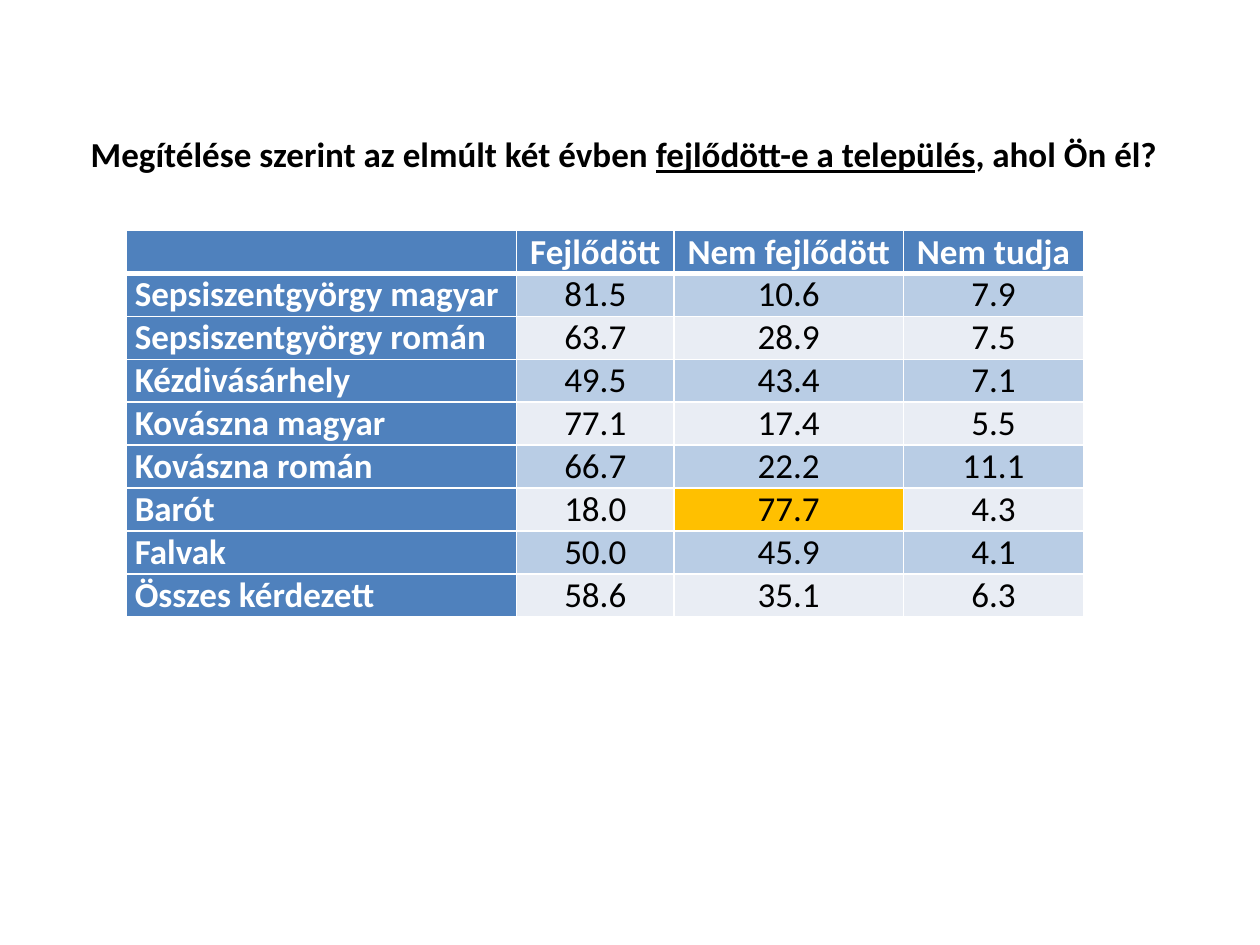
from dataclasses import dataclass

from lxml import etree
from pptx import Presentation
from pptx.dml.color import RGBColor
from pptx.enum.text import MSO_ANCHOR, MSO_AUTO_SIZE, PP_ALIGN
from pptx.oxml.ns import qn
from pptx.util import Inches, Pt

LEFT, CENTER = PP_ALIGN.LEFT, PP_ALIGN.CENTER
MIDDLE, BOTTOM = MSO_ANCHOR.MIDDLE, MSO_ANCHOR.BOTTOM
NO_AUTOFIT = MSO_AUTO_SIZE.NONE
TITLE_ONLY = 5


@dataclass(frozen=True)
class Theme:
    font: str = "Calibri"
    size: int = 20
    text: str = "000000"
    light: str = "FFFFFF"
    header: str = "4F81BD"
    bands: tuple = ("B9CDE5", "E9EDF4")
    highlight: str = "FFC000"
    rule: int = 1
    header_rule: int = 3


THEME = Theme()

QUESTION = [  # text, underlined
    ("Megítélése szerint az elmúlt két évben ", False),
    ("fejlődött-e a település", True),
    (", ahol Ön él?", False),
]
ANSWERS = [
    ("", "Fejlődött", "Nem fejlődött", "Nem tudja"),
    ("Sepsiszentgyörgy magyar", "81.5", "10.6", "7.9"),
    ("Sepsiszentgyörgy román", "63.7", "28.9", "7.5"),
    ("Kézdivásárhely", "49.5", "43.4", "7.1"),
    ("Kovászna magyar", "77.1", "17.4", "5.5"),
    ("Kovászna román", "66.7", "22.2", "11.1"),
    ("Barót", "18.0", "77.7", "4.3"),
    ("Falvak", "50.0", "45.9", "4.1"),
    ("Összes kérdezett", "58.6", "35.1", "6.3"),
]
COLUMN_WIDTHS = (3.1, 1.25, 1.82, 1.43)
HIGHLIGHTED = (6, 2)  # row, column


def add_run(paragraph, text, color, bold, underline=False):
    run = paragraph.add_run()
    run.text = text
    font = run.font
    font.name, font.size = THEME.font, Pt(THEME.size)
    font.bold, font.underline = bold, underline
    font.color.rgb = RGBColor.from_string(color)


def add_borders(cell, top, bottom):
    properties = cell._tc.get_or_add_tcPr()
    widths = {"lnL": THEME.rule, "lnR": THEME.rule, "lnT": top, "lnB": bottom}
    for side, width in widths.items():
        line = etree.SubElement(properties, qn(f"a:{side}"), w=str(Pt(width)))
        fill = etree.SubElement(line, qn("a:solidFill"))
        etree.SubElement(fill, qn("a:srgbClr"), val=THEME.light)


def place_question(slide, left, top, width, height):
    title = slide.shapes.title
    title.left, title.top = Inches(left), Inches(top)
    title.width, title.height = Inches(width), Inches(height)
    frame = title.text_frame
    frame.word_wrap, frame.auto_size = True, NO_AUTOFIT
    frame.vertical_anchor = MIDDLE
    paragraph = frame.paragraphs[0]
    paragraph.alignment = LEFT
    for text, underline in QUESTION:
        add_run(paragraph, text, THEME.text, True, underline)


def cell_fill(row, column):
    if row == 0 or column == 0:
        return THEME.header
    if (row, column) == HIGHLIGHTED:
        return THEME.highlight
    return THEME.bands[(row - 1) % 2]


def format_cell(cell, row, column, text):
    heading = row == 0 or column == 0
    add_borders(cell,
                top=THEME.header_rule if row == 1 else THEME.rule,
                bottom=THEME.header_rule if row == 0 else THEME.rule)
    cell.fill.solid()
    cell.fill.fore_color.rgb = RGBColor.from_string(cell_fill(row, column))
    cell.margin_left = cell.margin_right = Inches(0.07)
    cell.margin_top = cell.margin_bottom = 0
    cell.vertical_anchor = BOTTOM
    paragraph = cell.text_frame.paragraphs[0]
    paragraph.alignment = CENTER if column else LEFT
    if text:
        add_run(paragraph, text, THEME.light if heading else THEME.text, heading)


def place_answers(slide, left, top, width, height):
    table = slide.shapes.add_table(
        len(ANSWERS), len(COLUMN_WIDTHS),
        Inches(left), Inches(top), Inches(width), Inches(height)).table
    table.first_col = True
    for column, share in zip(table.columns, COLUMN_WIDTHS):
        column.width = Inches(width * share / sum(COLUMN_WIDTHS))
    for row, texts in enumerate(ANSWERS):
        for column, text in enumerate(texts):
            format_cell(table.cell(row, column), row, column, text)


def main():
    deck = Presentation()
    deck.slide_width, deck.slide_height = Inches(10), Inches(7.5)
    slide = deck.slides.add_slide(deck.slide_layouts[TITLE_ONLY])
    # Survey question
    place_question(slide, 0.62, 1, 8.7, 0.44)
    # Share of answers by settlement
    place_answers(slide, 1, 1.83, 7.6, 3)
    deck.save("out.pptx")


if __name__ == "__main__":
    main()
